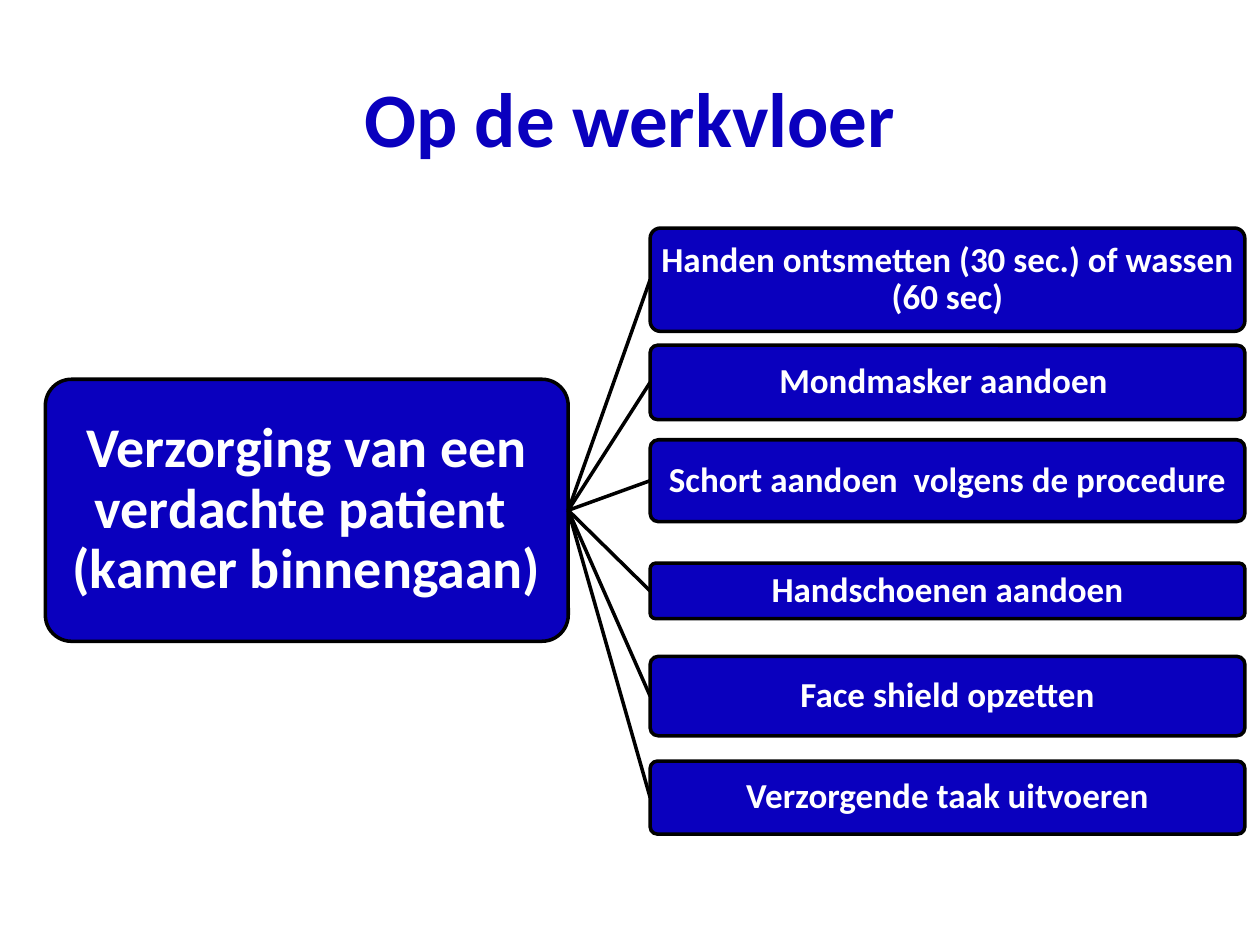
from lxml.etree import SubElement
from pptx import Presentation
from pptx.dml.color import RGBColor
from pptx.enum.shapes import MSO_CONNECTOR as Connector, MSO_SHAPE as Shape
from pptx.enum.text import MSO_ANCHOR as Anchor, PP_ALIGN as Align
from pptx.oxml.ns import qn
from pptx.util import Inches, Pt

BLUE, BLACK, WHITE = "0A00BE", "000000", "FFFFFF"
FONT = "Calibri"
TASK = "Verzorging van een verdachte patient \v(kamer binnengaan)"
TASK_BOX = (0.36, 3.01, 4.15, 2.08)
STEPS_LEFT, STEPS_WIDTH = 5.16, 4.72
STEPS = [
    ("Handen ontsmetten (30 sec.) of wassen (60 sec)", 1.81, 0.82),
    ("Mondmasker aandoen ", 2.74, 0.59),
    ("Schort aandoen  volgens de procedure", 3.49, 0.65),
    ("Handschoenen aandoen", 4.47, 0.44),
    ("Face shield opzetten", 5.21, 0.63),
    ("Verzorgende taak uitvoeren", 6.04, 0.58),
]


def color(value):
    """Turn a hex string into a colour."""
    return RGBColor.from_string(value)


def style_text(frame, size, ink):
    """Centre the text of a frame and format its runs."""
    frame.word_wrap = True
    frame.vertical_anchor = Anchor.MIDDLE
    for para in frame.paragraphs:
        para.alignment = Align.CENTER
        for span in para.runs:
            span.font.name = FONT
            span.font.size = Pt(size)
            span.font.bold = True
            span.font.color.rgb = color(ink)


def style_line(line):
    """Give an outline or connector the diagram's black stroke."""
    line.color.rgb = color(BLACK)
    line.width = Pt(2)


def add_title(page, text, box):
    """Place and format the slide title."""
    title = page.shapes.title
    title.left, title.top, title.width, title.height = map(Inches, box)
    title.text_frame.text = text
    style_text(title.text_frame, 44, BLUE)


def add_node(page, text, box, size, margin):
    """Draw one rounded box of the diagram and return it."""
    node = page.shapes.add_shape(Shape.ROUNDED_RECTANGLE, *map(Inches, box))
    node.adjustments[0] = 0.1
    node.shadow.inherit = False
    node.fill.solid()
    node.fill.fore_color.rgb = color(BLUE)
    style_line(node.line)
    frame = node.text_frame
    frame.margin_left = frame.margin_right = Inches(margin)
    frame.margin_top = frame.margin_bottom = Inches(margin)
    frame.text = text
    frame.paragraphs[0].line_spacing = 0.9
    style_text(frame, size, WHITE)
    return node


def add_branch(page, parent, child):
    """Connect the right side of one box to the left side of another."""
    branch = page.shapes.add_connector(Connector.STRAIGHT, 0, 0, 0, 0)
    branch.begin_connect(parent, 3)
    branch.end_connect(child, 1)
    style_line(branch.line)
    SubElement(branch._element.spPr, qn("a:effectLst"))


def add_hierarchy(page, task, task_box, steps, left, width):
    """Draw the task and the steps that branch from it."""
    parent = add_node(page, task, task_box, 32, 0.02)
    for text, top, height in steps:
        child = add_node(page, text, (left, top, width, height), 20, 0.01)
        add_branch(page, parent, child)


def main():
    """Build and save the deck."""
    deck = Presentation()
    deck.slide_width, deck.slide_height = Inches(10), Inches(7.5)
    page = deck.slides.add_slide(deck.slide_layouts[5])
    add_title(page, "Op de werkvloer", (0.5, 0.3, 9, 1.25))
    add_hierarchy(page, TASK, TASK_BOX, STEPS, STEPS_LEFT, STEPS_WIDTH)
    deck.save("out.pptx")


if __name__ == "__main__":
    main()
